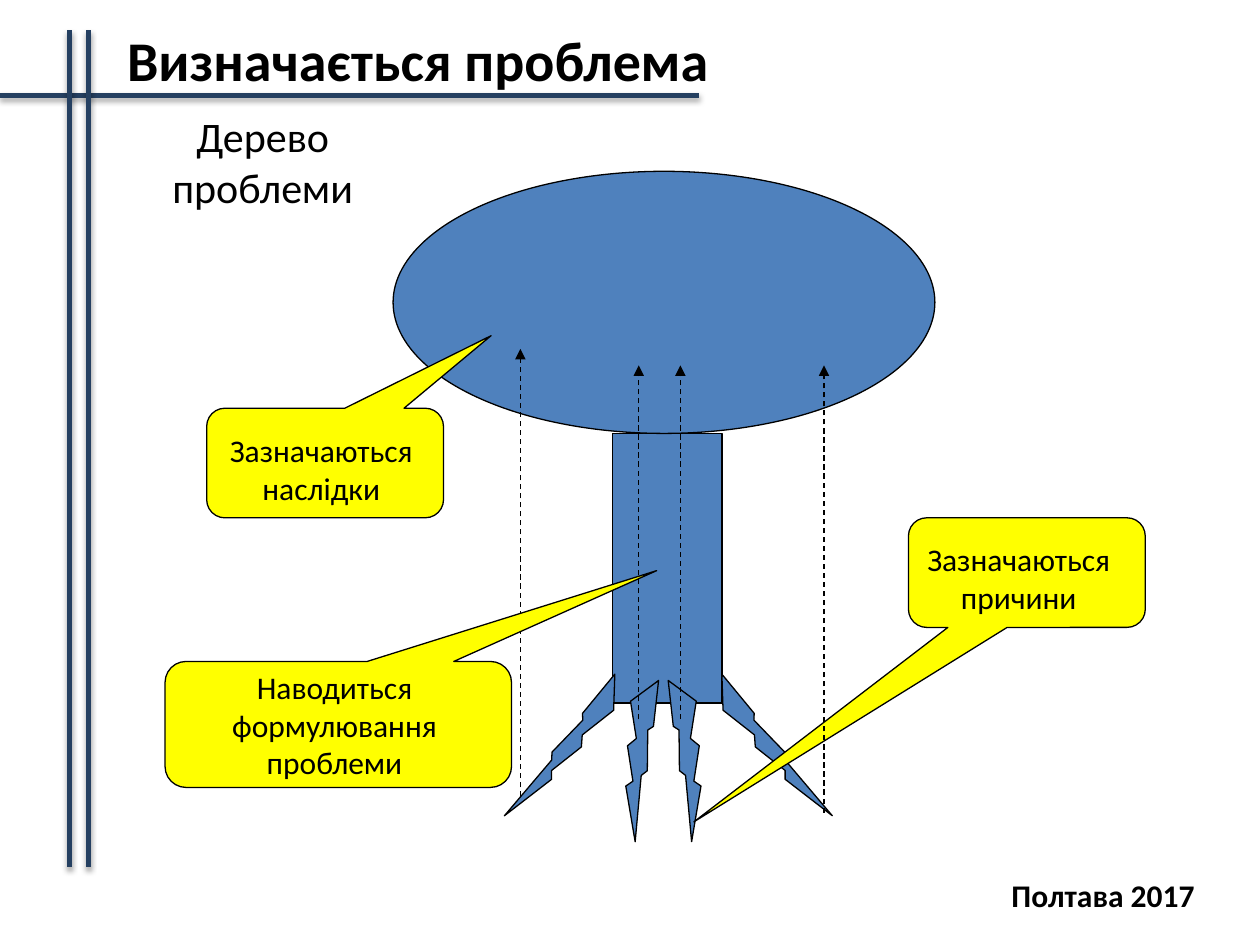
import pptx
import pptx.util
import pptx.dml.color
import pptx.enum.dml
import pptx.enum.shapes
import pptx.enum.text
import pptx.oxml
import pptx.oxml.ns
from pptx.util import Inches

SHAPES = pptx.enum.shapes.MSO_SHAPE
CENTER = pptx.enum.text.PP_ALIGN.CENTER
LEFT = pptx.enum.text.PP_ALIGN.LEFT
NAVY, BLUE, YELLOW, BLACK = "254061", "4F81BD", "FFFF00", "000000"
LINE_SHADOW = (
    '<a:outerShdw blurRad="39370" dist="22860" dir="5400000" rotWithShape="0">'
    '<a:srgbClr val="000000"><a:alpha val="35000"/></a:srgbClr></a:outerShdw>'
)


def color(hex_code):
    return pptx.dml.color.RGBColor.from_string(hex_code)


def xml(tag, inner="", attributes=""):
    namespace = pptx.oxml.ns.nsdecls("a")
    return pptx.oxml.parse_xml(f"<a:{tag} {namespace} {attributes}>{inner}</a:{tag}>")


def add_line(slide, start, end, line_color, width, effect=""):
    line = slide.shapes.add_connector(
        pptx.enum.shapes.MSO_CONNECTOR.STRAIGHT, *map(Inches, start + end))
    line.line.color.rgb = color(line_color)
    line.line.width = pptx.util.Pt(width)
    line._element.spPr.append(xml("effectLst", effect))
    return line


def add_arrow(slide, x, bottom, top):
    arrow = add_line(slide, (x, bottom), (x, top), BLACK, 0.75)
    arrow.line.dash_style = pptx.enum.dml.MSO_LINE.DASH
    arrow.line._ln.append(xml("tailEnd", attributes='type="triangle"'))


def add_shape(slide, kind, box, fill, rotation=0, flipped=False):
    shape = slide.shapes.add_shape(kind, *map(Inches, box))
    shape.shadow.inherit = False
    shape.fill.solid()
    shape.fill.fore_color.rgb = color(fill)
    shape.line.color.rgb = color(BLACK)
    shape.line.width = pptx.util.Pt(0.75)
    shape.rotation = rotation
    if flipped:
        shape._element.spPr.xfrm.set("flipH", "1")
    return shape


def add_text(slide, text, box, size, bold=False, align=CENTER):
    label = slide.shapes.add_textbox(*map(Inches, box))
    label.text_frame.word_wrap = True
    paragraph = label.text_frame.paragraphs[0]
    paragraph.text = text
    paragraph.alignment = align
    paragraph.font.name = "Calibri"
    paragraph.font.size = pptx.util.Pt(size)
    paragraph.font.bold = bold
    paragraph.font.color.rgb = color(BLACK)


def add_callout(slide, text, box, pointer, text_box):
    callout = add_shape(slide, SHAPES.ROUNDED_RECTANGULAR_CALLOUT, box, YELLOW)
    for index, value in enumerate(pointer):
        callout.adjustments[index] = value
    add_text(slide, text, text_box, 18)


def main():
    presentation = pptx.Presentation()
    presentation.slide_width = Inches(10)
    presentation.slide_height = Inches(7.5)
    slide = presentation.slides.add_slide(presentation.slide_layouts[6])

    # Frame lines, footer and title
    for start, end in [((0, 0.76), (5.55, 0.76)),
                       ((0.55, 0.24), (0.55, 6.88)),
                       ((0.7, 0.24), (0.7, 6.88))]:
        add_line(slide, start, end, NAVY, 3, LINE_SHADOW)
    add_text(slide, "Полтава 2017", (7.69, 6.9, 2.13, 0.4), 18, bold=True)
    add_text(slide, "Визначається проблема", (0.91, 0.15, 6.48, 0.64), 32,
             bold=True, align=LEFT)

    # Trunk and crown
    add_shape(slide, SHAPES.RECTANGLE, (4.86, 3.44, 0.87, 2.14), BLUE)
    add_shape(slide, SHAPES.OVAL, (3.12, 1.36, 4.3, 2.08), BLUE)

    # Roots: outer pair, then inner pair, each mirrored
    for box, rotation, flipped in [((5.94, 5.24, 0.34, 1.41), -29.6, False),
                                   ((4.33, 5.24, 0.34, 1.41), 29.6, True),
                                   ((4.86, 5.38, 0.4, 1.27), 19.1, False),
                                   ((5.27, 5.38, 0.4, 1.27), -19.1, True)]:
        add_shape(slide, SHAPES.LIGHTNING_BOLT, box, BLUE, rotation, flipped)

    add_text(slide, "Дерево проблеми", (0.91, 0.83, 2.35, 0.43), 24)

    # Consequences and causes
    add_callout(slide, "Зазначаються наслідки", (1.64, 3.24, 1.88, 0.87),
                (0.701, -1.162), (1.71, 3.37, 1.68, 0.6))
    add_callout(slide, "Зазначаються причини", (7.21, 4.11, 1.88, 0.87),
                (-1.406, 2.274), (7.21, 4.24, 1.75, 0.6))

    # Arrows from the roots to the crown
    for x, bottom, top in [(4.13, 6.32, 2.77), (6.54, 6.45, 2.9),
                           (5.4, 5.71, 2.9), (5.07, 5.71, 2.9)]:
        add_arrow(slide, x, bottom, top)

    # Problem statement
    add_callout(slide, "Наводиться формулювання проблеми", (1.31, 5.25, 2.75, 1),
                (0.919, -1.221), (1.38, 5.25, 2.55, 0.85))

    presentation.save("out.pptx")


if __name__ == "__main__":
    main()
